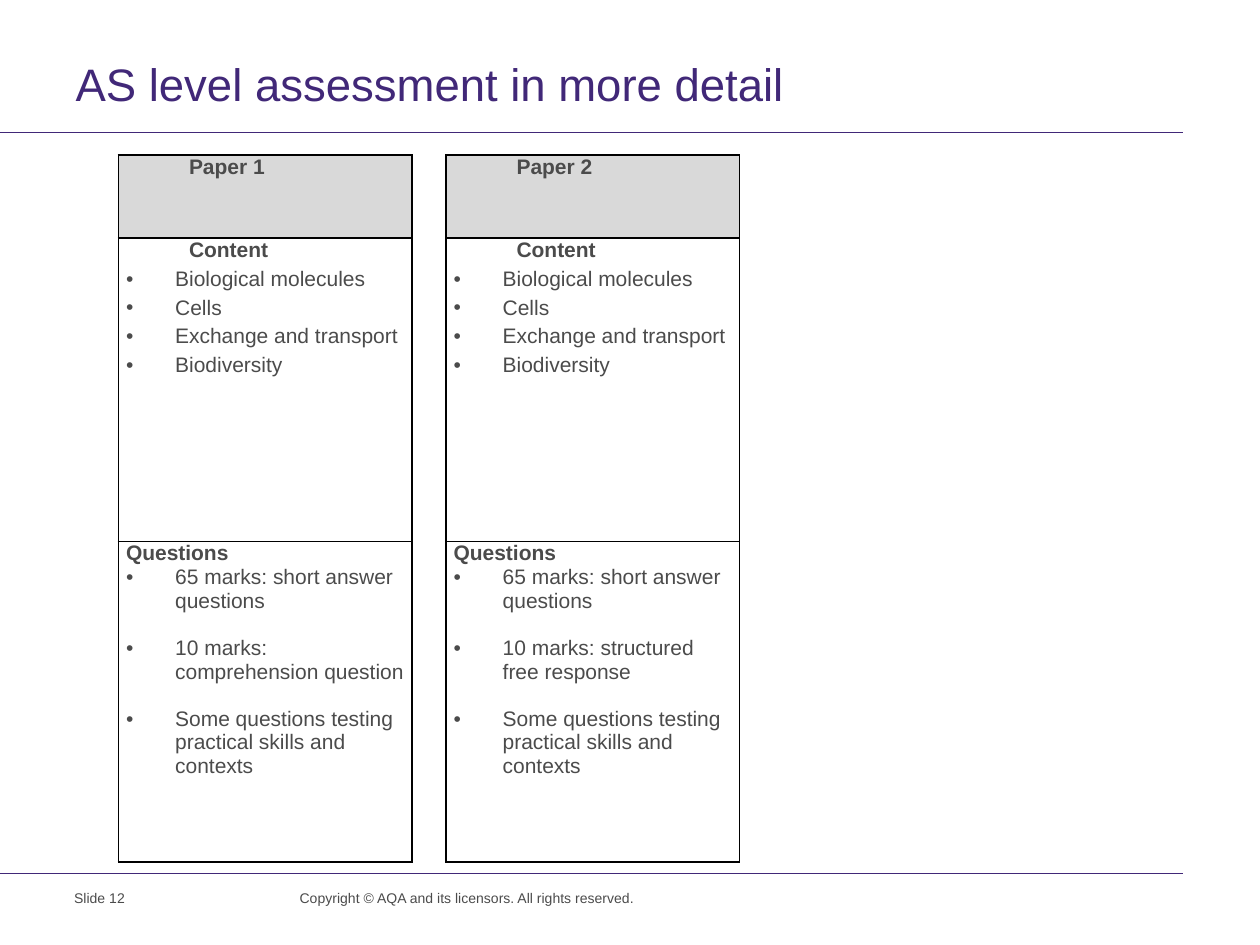
from lxml import etree
from pptx import Presentation
from pptx.dml.color import RGBColor
from pptx.enum.shapes import MSO_CONNECTOR
from pptx.enum.text import MSO_ANCHOR, PP_ALIGN
from pptx.oxml.ns import qn
from pptx.util import Inches, Pt

STRAIGHT = MSO_CONNECTOR.STRAIGHT
MIDDLE = MSO_ANCHOR.MIDDLE
LEFT = PP_ALIGN.LEFT
FONT = "Arial"
PURPLE, GREY, SHADE, BLACK = "412878", "4B4B4B", "D9D9D9", "000000"
LINE = 13.5

TOPICS = ["Biological molecules", "Cells", "Exchange and transport", "Biodiversity"]
SHORT = "65 marks: short answer questions"
SKILLS = "Some questions testing practical skills and contexts"
PAPERS = [
    ("Paper 1", [SHORT, "10 marks: comprehension question", SKILLS]),
    ("Paper 2", [SHORT, "10 marks: structured free response", SKILLS]),
]


def color(code):
    return RGBColor.from_string(code)


def style(font, size, code, bold=False):
    font.name = FONT
    font.size = Pt(size)
    font.bold = bold
    font.color.rgb = color(code)


def add_title(slide, text):
    title = slide.shapes.title
    title.left, title.top = Inches(0.5), Inches(0.44)
    title.width, title.height = Inches(9.5), Inches(0.48)
    frame = title.text_frame
    frame.text = text
    frame.margin_top = frame.margin_bottom = 0
    frame.vertical_anchor = MIDDLE
    para = frame.paragraphs[0]
    para.alignment = LEFT
    para.line_spacing = Pt(28)
    style(para.runs[0].font, 26, PURPLE)


def add_rule(slide, y):
    rule = slide.shapes.add_connector(
        STRAIGHT, 0, Inches(y), Inches(9.39), Inches(y))
    rule.line.color.rgb = color(PURPLE)
    rule.line.width = Pt(0.6)
    etree.SubElement(rule._element.spPr, qn("a:effectLst"))


def add_note(slide, text, x, width):
    box = slide.shapes.add_textbox(
        Inches(x), Inches(7.01), Inches(width), Inches(0.26))
    box.text_frame.word_wrap = True
    box.text_frame.text = text
    style(box.text_frame.paragraphs[0].runs[0].font, 8, GREY)


def set_edges(cell, sides):
    """Draw black borders on the given sides (L, R, T, B), none on the rest."""
    props = cell._tc.get_or_add_tcPr()
    for side in "LRTB":
        edge = etree.SubElement(props, qn(f"a:ln{side}"), w=str(Pt(1)))
        if side in sides:
            fill = etree.SubElement(edge, qn("a:solidFill"))
            etree.SubElement(fill, qn("a:srgbClr"), val=BLACK)
        else:
            etree.SubElement(edge, qn("a:noFill"))


def set_indent(para, left, bullet=False):
    props = para._p.get_or_add_pPr()
    props.set("marL", str(Inches(left)))
    props.set("indent", str(Inches(-left if bullet else 0)))
    if bullet:
        etree.SubElement(props, qn("a:buFont"), typeface=FONT)
        etree.SubElement(props, qn("a:buChar"), char="•")


def fill_cell(cell, head, indent, items=(), first=0, gap=0):
    """Write a bold heading and bullets; first and gap are points before them."""
    frame = cell.text_frame
    frame.text = "\n".join([head, *items])
    for i, para in enumerate(frame.paragraphs):
        set_indent(para, 0.39 if i else indent, bullet=i > 0)
        para.line_spacing = Pt(LINE)
        if i:
            para.space_before = Pt(first if i == 1 else gap)
        style(para.runs[0].font, 12, GREY, bold=i == 0)


def add_grid(slide):
    cols, rows = [2.33, 0.27, 2.33], [0.66, 2.41, 2.54]
    grid = slide.shapes.add_table(
        len(rows), len(cols), Inches(0.94), Inches(1.23),
        Inches(sum(cols)), Inches(sum(rows))).table
    grid.first_row = grid.horz_banding = False
    for col, width in zip(grid.columns, cols):
        col.width = Inches(width)
    for row, height in zip(grid.rows, rows):
        row.height = Inches(height)
    for r in range(len(rows)):
        for c in range(len(cols)):
            cell = grid.cell(r, c)
            cell.margin_left = cell.margin_right = Inches(0.06)
            cell.margin_top = cell.margin_bottom = 0
            set_edges(cell, "LR" if c == 1 else "LRTB")
            if r == 0 and c != 1:
                cell.fill.solid()
                cell.fill.fore_color.rgb = color(SHADE)
            else:
                cell.fill.background()
    for c, (name, tasks) in zip((0, 2), PAPERS):
        fill_cell(grid.cell(0, c), name, 0.5)
        fill_cell(grid.cell(1, c), "Content", 0.5, TOPICS, first=3, gap=3)
        fill_cell(grid.cell(2, c), "Questions", 0, tasks, gap=LINE)


def main():
    deck = Presentation()
    deck.slide_width, deck.slide_height = Inches(10), Inches(7.5)
    slide = deck.slides.add_slide(deck.slide_layouts[5])
    for y in (1.05, 6.93):
        add_rule(slide, y)
    add_title(slide, "AS level assessment in more detail")
    add_note(slide, "Slide 12", 0.49, 1.56)
    add_note(slide, "Copyright © AQA and its licensors. All rights reserved.",
             2.28, 2.93)
    add_grid(slide)
    deck.save("out.pptx")


if __name__ == "__main__":
    main()
